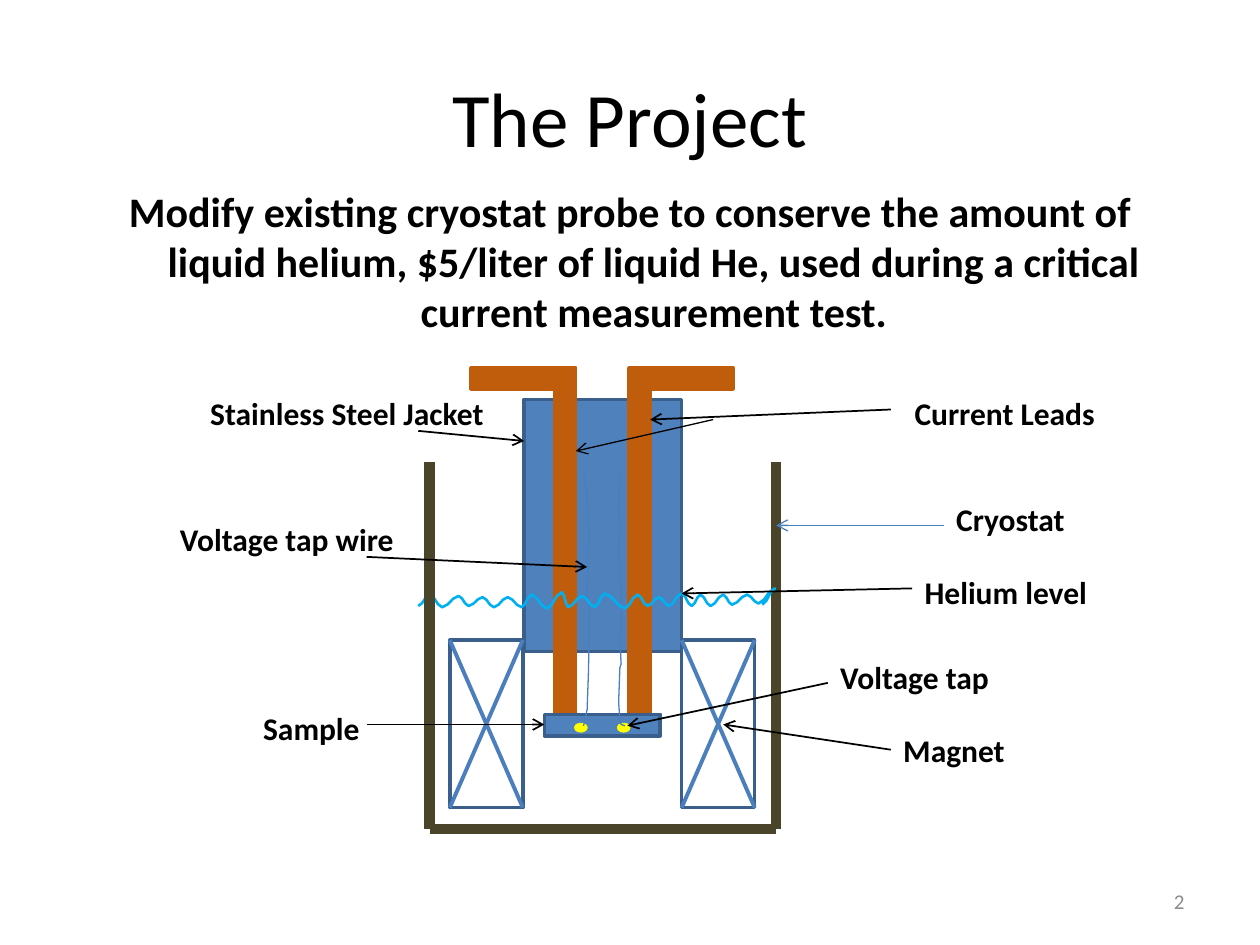
from math import cos, pi
from pptx import Presentation
from pptx.util import Inches, Pt
from pptx.dml.color import RGBColor
from pptx.enum.shapes import MSO_SHAPE, MSO_CONNECTOR
from pptx.enum.text import PP_ALIGN, MSO_ANCHOR, MSO_AUTO_SIZE
from pptx.oxml.ns import qn
from lxml.etree import SubElement

THEME = {
    "font": "Calibri", "ink": "000000", "gray": "8C8C8C", "blue": "4F81BD",
    "edge": "3A5F8C", "wire": "4B7EBC", "lead": "C05D0C", "tap": "FFFF00",
    "wall": "4A452A", "helium": "00B0F0", "white": "FFFFFF",
    "title": 44, "body": 24, "label": 18, "small": 12,
}

TITLE = "The Project"
BODY = ("Modify existing cryostat probe to conserve the amount of liquid helium, "
        "$5/liter of liquid He, used during a critical current measurement test.")
NUMBER = "2"

JACKET = (4.16, 3.17, 1.25, 2)
LEADS = [(4.4, 3.08, 0.17, 2.58), (4.99, 3.08, 0.17, 2.58),
         (3.74, 2.92, 0.83, 0.17), (4.99, 2.92, 0.83, 0.17)]
SAMPLE = (4.32, 5.67, 0.92, 0.17)
TAPS = [(4.57, 5.75, 0.08, 0.05), (4.91, 5.75, 0.08, 0.05)]
MAGNETS = [(3.57, 5.08, 0.58, 1.33), (5.41, 5.08, 0.58, 1.33)]
WIRES = [
    [(4.63, 5.76), (4.64, 5.73), (4.66, 5.63), (4.67, 5.35), (4.68, 4.85),
     (4.66, 4.74), (4.67, 4.31), (4.68, 4.28), (4.67, 4.14), (4.66, 3.92),
     (4.65, 3.87), (4.63, 3.75)],
    [(4.96, 5.76), (4.93, 5.75), (4.92, 5.72), (4.91, 5.57), (4.92, 5.3),
     (4.93, 5.27), (4.92, 5.07), (4.93, 5.04), (4.93, 4.65), (4.91, 4.38),
     (4.92, 4.22), (4.93, 4.19), (4.91, 4.07), (4.92, 3.75)],
]
WAVE = [(3.32, 4.81), (3.41, 4.72), (3.51, 4.82), (3.64, 4.73), (3.72, 4.81),
        (3.83, 4.74), (3.92, 4.82), (4.03, 4.74), (4.14, 4.82), (4.22, 4.72),
        (4.34, 4.83), (4.46, 4.7), (4.51, 4.82), (4.62, 4.73), (4.72, 4.82),
        (4.8, 4.71), (4.96, 4.83), (5.06, 4.72), (5.14, 4.81), (5.23, 4.74),
        (5.31, 4.81), (5.41, 4.71), (5.49, 4.81), (5.56, 4.72), (5.64, 4.81),
        (5.74, 4.72), (5.81, 4.8), (5.93, 4.72), (6.02, 4.79), (6.15, 4.67),
        (6.05, 4.8)]
RIGHT = (6.16, 3.67, 6.16, 6.58)
FLOOR = [(3.49, 6.58, 6.16, 6.58), (3.66, 6.58, 3.41, 6.58)]
LEFT = (3.41, 3.67, 3.41, 6.58)
ARROWS = [
    ((7.07, 3.25, 5.16, 3.33), "ink", 1), ((7.07, 5.95, 5.74, 5.75), "ink", 1),
    ((7.24, 4.67, 5.41, 4.71), "ink", 1), ((2.91, 5.75, 4.32, 5.75), "ink", 1),
    ((2.91, 4.42, 4.66, 4.5), "ink", 1), ((6.57, 5.42, 4.98, 5.76), "ink", 1),
    ((3.32, 3.42, 4.16, 3.5), "ink", 1), ((5.66, 3.33, 4.57, 3.58), "ink", 0.75),
    ((7.49, 4.17, 6.16, 4.17), "wire", 0.75),
]
LABELS = [
    ("Current Leads", 7.16, 3.08, 1.68), ("Helium level", 7.24, 4.5, 1.5),
    ("Cryostat", 7.49, 3.92, 1.1), ("Voltage tap", 6.57, 5.17, 1.39),
    ("Magnet", 7.07, 5.75, 1.01), ("Sample", 1.99, 5.58, 0.97),
    ("Voltage tap wire", 1.33, 4.08, 1.91),
    ("Stainless Steel Jacket", 1.57, 3.08, 2.39),
]


def tint(name):
    return RGBColor.from_string(THEME[name])


def stroke(item, color, width):
    item.line.color.rgb = tint(color)
    item.line.width = Pt(width)


def block(slide, box, fill, edge, kind=MSO_SHAPE.RECTANGLE):
    item = slide.shapes.add_shape(kind, *map(Inches, box))
    item.shadow.inherit = False
    item.fill.solid()
    item.fill.fore_color.rgb = tint(fill)
    stroke(item, edge, 2)


def rule(slide, ends, color, width, arrow=False):
    item = slide.shapes.add_connector(MSO_CONNECTOR.STRAIGHT, *map(Inches, ends))
    stroke(item, color, width)
    if arrow:
        SubElement(item.line._get_or_add_ln(), qn("a:tailEnd"), type="arrow")
    SubElement(item._element.spPr, qn("a:effectLst"))


def trace(slide, points, color, width):
    spots = [(Inches(x), Inches(y)) for x, y in points]
    path = slide.shapes.build_freeform(*spots[0])
    path.add_line_segments(spots[1:], close=False)
    item = path.convert_to_shape()
    item.shadow.inherit = False
    item.fill.background()
    stroke(item, color, width)


def ease(points, steps=3):
    curve = [points[0]]
    for (x, y), (u, v) in zip(points, points[1:]):
        for n in range(1, steps + 1):
            t = n / steps
            curve.append((x + (u - x) * t, y + (v - y) * (1 - cos(pi * t)) / 2))
    return curve


def write(slide, text, box, size, color="ink", bold=False, wrap=True,
          align=PP_ALIGN.LEFT, anchor=MSO_ANCHOR.TOP):
    item = slide.shapes.add_textbox(*map(Inches, box))
    frame = item.text_frame
    frame.word_wrap = wrap
    frame.auto_size = MSO_AUTO_SIZE.NONE if wrap else MSO_AUTO_SIZE.SHAPE_TO_FIT_TEXT
    frame.vertical_anchor = anchor
    para = frame.paragraphs[0]
    para.alignment = align
    run = para.add_run()
    run.text = text
    font = run.font
    font.name, font.size, font.bold = THEME["font"], Pt(THEME[size]), bold
    font.color.rgb = tint(color)
    return para


def main():
    """Build the cryostat probe slide."""
    deck = Presentation()
    deck.slide_width, deck.slide_height = Inches(10), Inches(7.5)
    slide = deck.slides.add_slide(deck.slide_layouts[6])

    block(slide, JACKET, "blue", "edge")
    write(slide, TITLE, (0.5, 0.3, 9, 1.25), "title",
          align=PP_ALIGN.CENTER, anchor=MSO_ANCHOR.MIDDLE)
    para = write(slide, BODY, (0.5, 1.42, 9, 5.28), "body", bold=True,
                 align=PP_ALIGN.CENTER)
    para.space_before = Pt(4.5)
    inset = Inches(0.38)
    props = para._p.get_or_add_pPr()
    props.set("marL", str(inset))
    props.set("indent", str(-inset))
    write(slide, NUMBER, (7.33, 6.95, 2.17, 0.4), "small", "gray",
          align=PP_ALIGN.RIGHT, anchor=MSO_ANCHOR.MIDDLE)

    for box in LEADS:
        block(slide, box, "lead", "lead")
    block(slide, SAMPLE, "blue", "edge")
    for box in TAPS:
        block(slide, box, "tap", "tap", MSO_SHAPE.OVAL)
    for points in WIRES:
        trace(slide, points, "wire", 0.75)
    for ends in [RIGHT] + FLOOR:
        rule(slide, ends, "wall", 6)
    for box in MAGNETS:
        x, y, w, h = box
        block(slide, box, "white", "edge")
        rule(slide, (x, y, x + w, y + h), "wire", 2.25)
        rule(slide, (x, y + h, x + w, y), "wire", 2.25)
    trace(slide, ease(WAVE), "helium", 1.5)
    rule(slide, LEFT, "wall", 6)
    for ends, color, width in ARROWS:
        rule(slide, ends, color, width, arrow=True)
    for text, x, y, w in LABELS:
        write(slide, text, (x, y, w, 0.4), "label", bold=True, wrap=False)

    deck.save("out.pptx")


if __name__ == "__main__":
    main()
